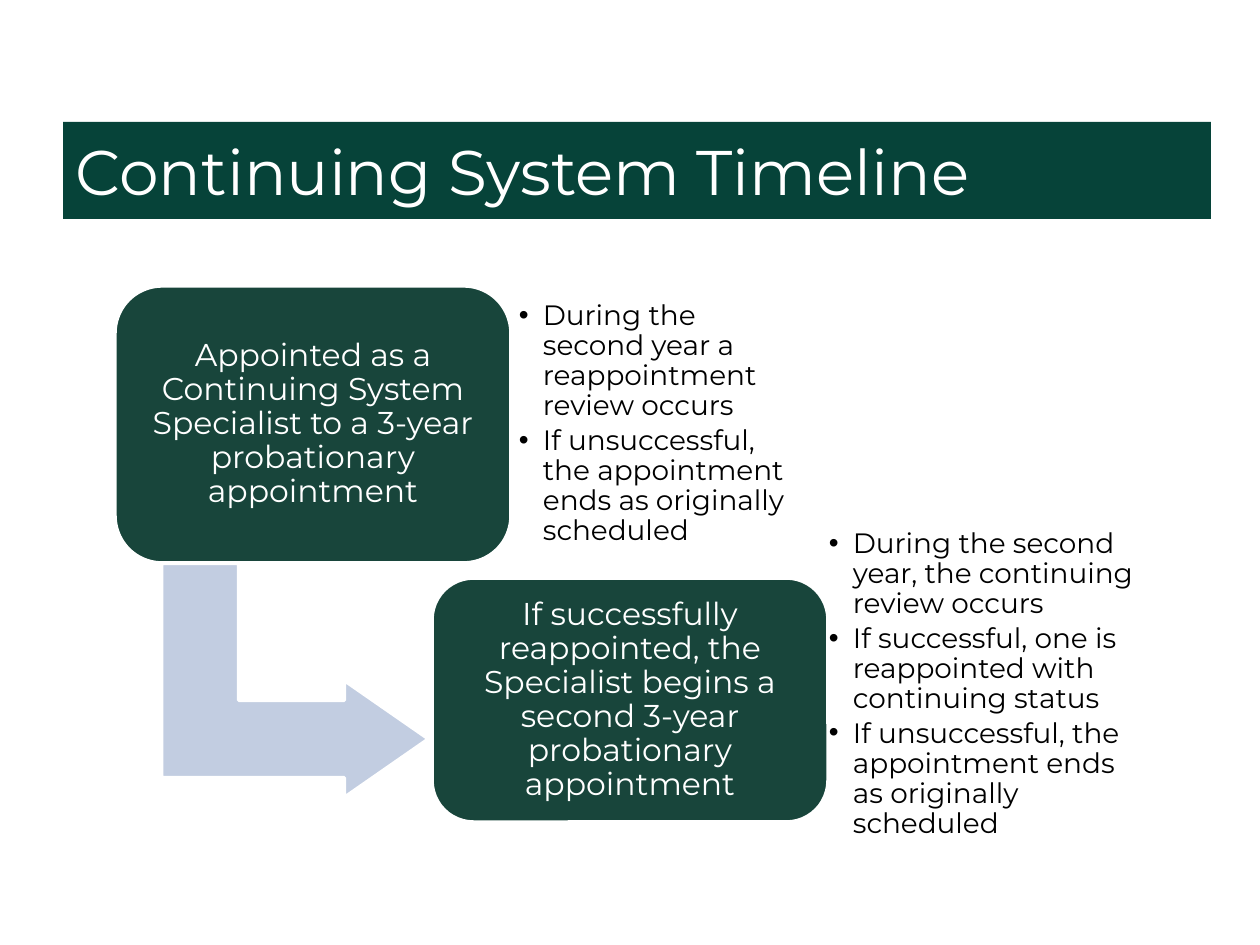
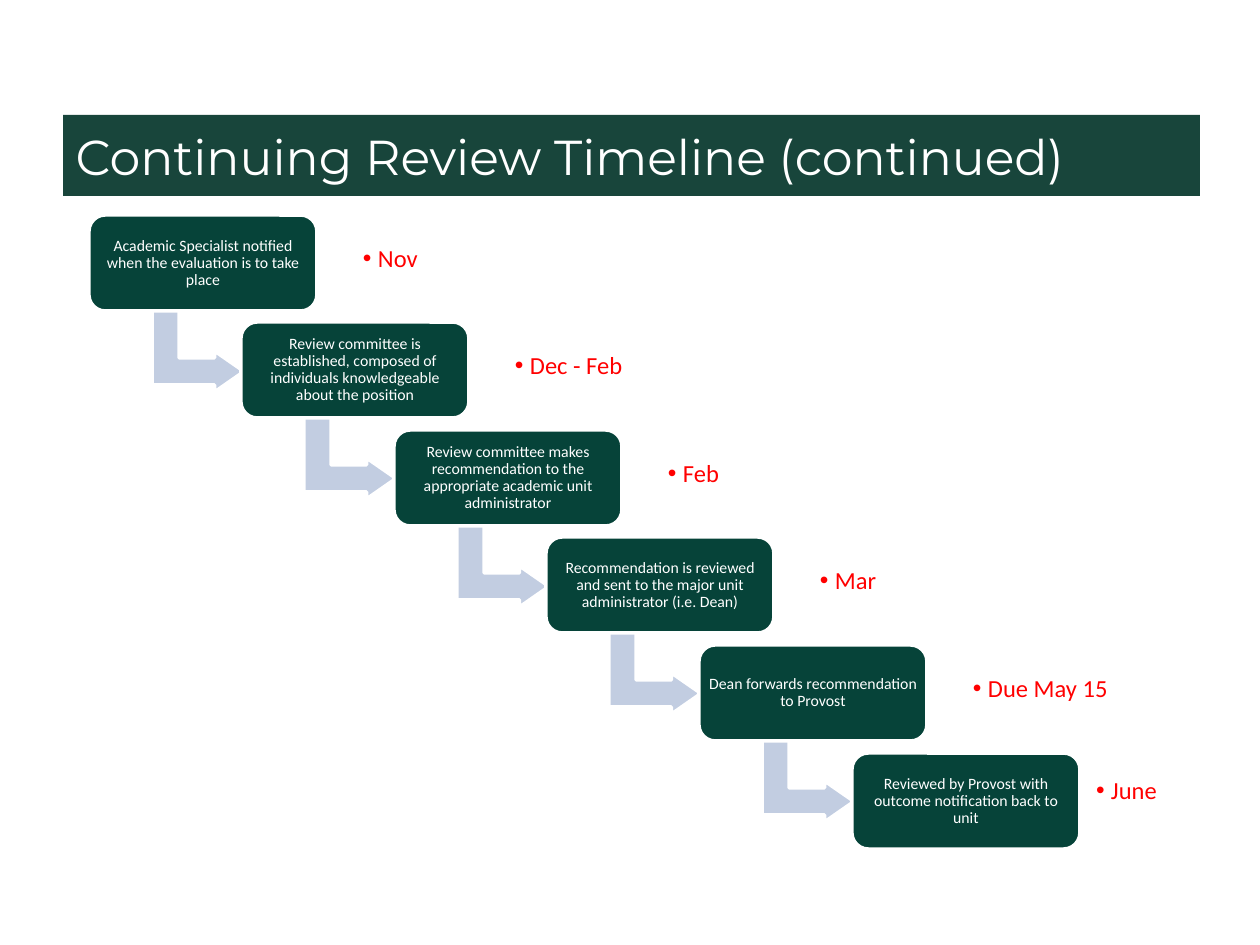
from lxml.etree import SubElement
from pptx import Presentation
from pptx.dml.color import RGBColor
from pptx.enum.shapes import MSO_SHAPE as Shape
from pptx.enum.text import MSO_ANCHOR as Anchor, MSO_AUTO_SIZE as Fit, PP_ALIGN as Align
from pptx.oxml.ns import qn
from pptx.util import Pt

# Scale: 126 px to the inch
PX = 914400 / 126
WIDE, HIGH = 1260, 945

# Shared colours and fonts
WHITE = RGBColor(0xFF, 0xFF, 0xFF)
BLACK = RGBColor(0x00, 0x00, 0x00)
RED = RGBColor(0xFF, 0x00, 0x00)
DARK = RGBColor(0x06, 0x43, 0x39)
GREEN = RGBColor(0x18, 0x45, 0x3B)
PALE = RGBColor(0xC2, 0xCD, 0xE1)
HEAD, BODY = "Montserrat", "Calibri"

TERMS = [
    ("Appointed as a Continuing System Specialist to a 3-year "
     "probationary appointment",
     (115, 286, 396, 277), (510, 312, 287, 224),
     ["During the second year a reappointment review occurs",
      "If unsuccessful, the appointment ends as originally scheduled"]),
    ("If successfully reappointed, the Specialist begins a second 3-year "
     "probationary appointment",
     (432, 578, 396, 244), (820, 592, 325, 185),
     ["During the second year, the continuing review occurs",
      "If successful, one is reappointed with continuing status",
      "If unsuccessful, the appointment ends as originally scheduled"]),
]

STEPS = [
    ("Academic Specialist notified when the evaluation is to take place", "Nov"),
    ("Review committee is established, composed of individuals "
     "knowledgeable about the position", "Dec - Feb"),
    ("Review committee makes recommendation to the appropriate academic "
     "unit administrator", "Feb"),
    ("Recommendation is reviewed and sent to the major unit administrator "
     "(i.e. Dean)", "Mar"),
    ("Dean forwards recommendation to Provost", "Due May 15"),
    ("Reviewed by Provost with outcome notification back to unit", "June"),
]


def px(num):
    return round(num * PX)


def place(area):
    return [px(num) for num in area]


def write(para, text, font, size, color):
    run = para.add_run()
    run.text = text
    run.font.name = font
    run.font.size = Pt(size)
    run.font.color.rgb = color


def set_frame(frame, inset):
    frame.word_wrap = True
    frame.auto_size = Fit.NONE
    frame.vertical_anchor = Anchor.MIDDLE
    frame.margin_left = frame.margin_right = px(inset)
    frame.margin_top = frame.margin_bottom = px(inset)


def add_title(slide, text, area, size, fill):
    title = slide.shapes.title
    title.left, title.top, title.width, title.height = place(area)
    title.fill.solid()
    title.fill.fore_color.rgb = fill
    frame = title.text_frame
    frame.auto_size = Fit.NONE
    frame.vertical_anchor = Anchor.MIDDLE
    para = frame.paragraphs[0]
    para.alignment = Align.LEFT
    write(para, text, HEAD, size, WHITE)


def add_block(slide, kind, area, fill, ratios):
    block = slide.shapes.add_shape(kind, *place(area))
    block.shadow.inherit = False
    block.fill.solid()
    block.fill.fore_color.rgb = fill
    block.line.color.rgb = WHITE
    block.line.width = Pt(2)
    for spot, ratio in enumerate(ratios):
        block.adjustments[spot] = ratio
    return block


def add_arrow(slide, area):
    arrow = add_block(slide, Shape.BENT_UP_ARROW, area, PALE, (0.33, 0.25, 0.36))
    arrow.rotation = 90


def add_box(slide, text, area, fill, font, size, inset):
    box = add_block(slide, Shape.ROUNDED_RECTANGLE, area, fill, (0.17,))
    set_frame(box.text_frame, inset)
    para = box.text_frame.paragraphs[0]
    para.alignment = Align.CENTER
    para.line_spacing = 0.9
    write(para, text, font, size, WHITE)


def add_list(slide, items, area, font, size, color, inset, hang):
    frame = slide.shapes.add_textbox(*place(area)).text_frame
    set_frame(frame, inset)
    for spot, item in enumerate(items):
        para = frame.add_paragraph() if spot else frame.paragraphs[0]
        props = para._p.get_or_add_pPr()
        props.set("marL", str(px(hang)))
        props.set("indent", str(-px(hang)))
        SubElement(props, qn("a:buFont")).set("typeface", "Arial")
        SubElement(props, qn("a:buChar")).set("char", "•")
        para.level = 1
        para.line_spacing = 0.9
        para.space_after = Pt(size * 0.15)
        write(para, item, font, size, color)


def draw_terms(slide):
    add_title(slide, "Continuing System Timeline", (63, 122, 1148, 97), 36, DARK)
    add_arrow(slide, (178, 547, 234, 267))
    for text, area, side, notes in TERMS:
        add_box(slide, text, area, GREEN, HEAD, 18, 9)
        add_list(slide, notes, side, HEAD, 16, BLACK, 9, 24)


def draw_steps(slide):
    add_title(slide, "Continuing Review Timeline (continued)",
              (63, 115, 1137, 81), 28, GREEN)
    last = len(STEPS) - 1
    for spot, (text, date) in enumerate(STEPS):
        # Equal stair steps from the first box to the last
        left = 89 + 763 * spot // last
        top = 215 + 538 * spot // last
        if spot < last:
            add_arrow(slide, (left + 68, top + 90, 82, 92))
        add_box(slide, text, (left, top, 228, 96), DARK, BODY, 9, 5)
        # The last date sits closer, to stay on the slide
        over, down = (266, 6) if spot < last else (236, 0)
        add_list(slide, [date], (left + over, top + down, 171, 77),
                 BODY, 14, RED, 8, 15)


def main():
    deck = Presentation()
    deck.slide_width, deck.slide_height = px(WIDE), px(HIGH)
    for draw in (draw_terms, draw_steps):
        draw(deck.slides.add_slide(deck.slide_layouts[5]))
    deck.save("out.pptx")


if __name__ == "__main__":
    main()
